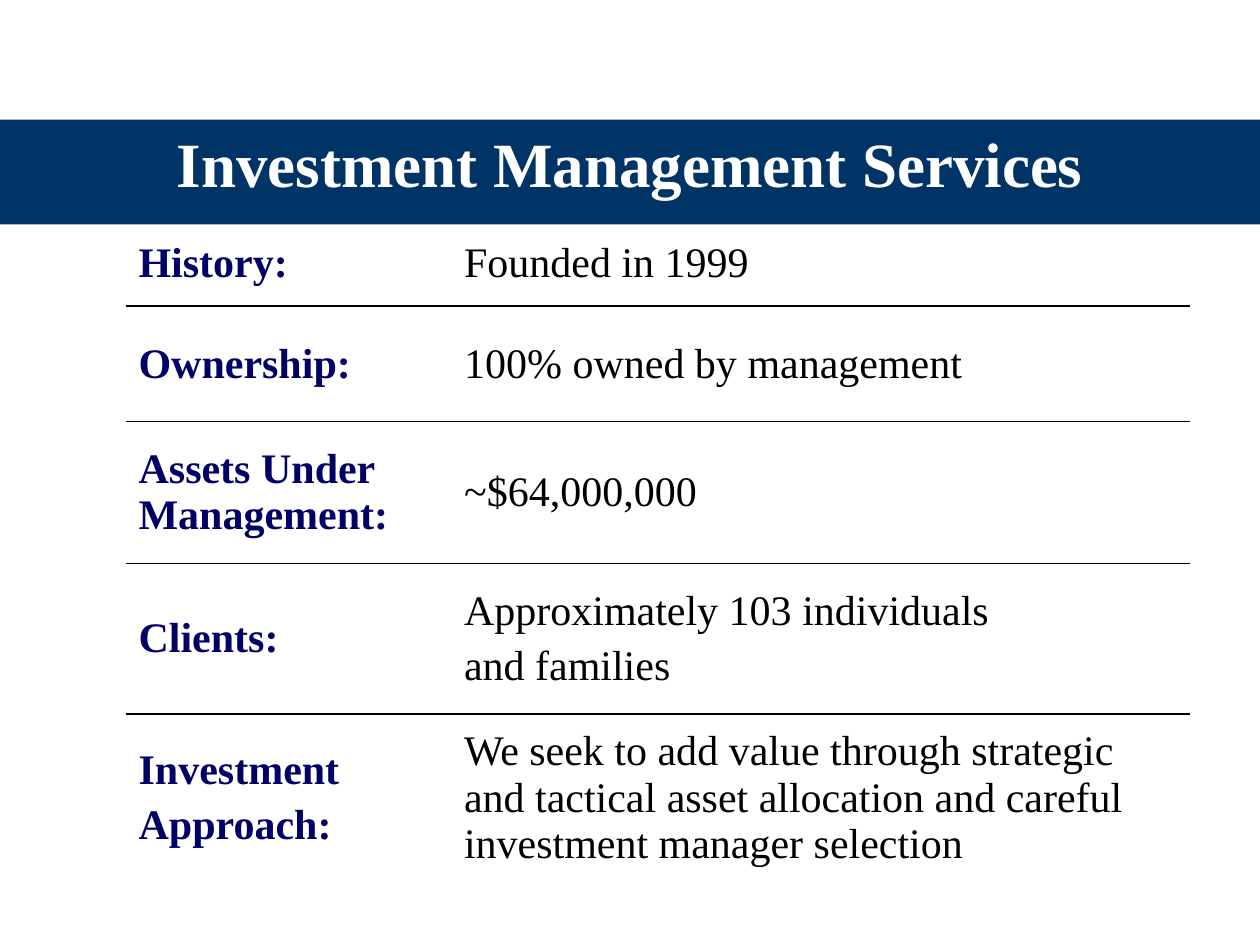
from lxml import etree
from pptx import Presentation
from pptx.dml.color import RGBColor
from pptx.enum import shapes, text
from pptx.oxml.ns import qn
from pptx.util import Pt

NAVY, LABEL, BLACK, WHITE = "003366", "000066", "000000", "FFFFFF"
COLUMN_WIDTHS = (186, 422)
FACTS = [
    (49, "History:", "Founded in 1999"),
    (66, "Ownership:", "100% owned by management"),
    (81, "Assets Under Management:", "~$64,000,000"),
    (86, "Clients:", "Approximately 103 individuals\nand families"),
    (96, "Investment\nApproach:",
     "We seek to add value through strategic and tactical asset "
     "allocation and careful investment manager selection"),
]


def colour(value):
    return RGBColor.from_string(value)


class FactSheet:
    face = "Times New Roman"
    body_size = 24
    title_size = 36

    def __init__(self, slide):
        self.slide = slide

    def style(self, paragraph, size, ink, bold):
        font = paragraph.font
        font.name, font.size, font.bold = self.face, Pt(size), bold
        font.color.rgb = colour(ink)

    def banner(self, left, top, width, height, title):
        band = self.slide.shapes.add_shape(
            shapes.MSO_SHAPE.RECTANGLE, Pt(left), Pt(top), Pt(width), Pt(height))
        band.shadow.inherit = False
        band.fill.solid()
        band.fill.fore_color.rgb = colour(NAVY)
        band.line.fill.background()
        frame = band.text_frame
        frame.word_wrap = True
        frame.vertical_anchor = text.MSO_ANCHOR.MIDDLE
        heading = frame.paragraphs[0]
        heading.text = title
        heading.alignment = text.PP_ALIGN.CENTER
        heading.line_spacing = Pt(32)
        self.style(heading, self.title_size, WHITE, True)

    def rules(self, cell, ruled_sides):
        properties = cell._tc.get_or_add_tcPr()
        for position, side in enumerate(("lnL", "lnR", "lnT", "lnB")):
            edge = etree.Element(qn(f"a:{side}"), w=str(Pt(1)))
            if side in ruled_sides:
                paint = etree.SubElement(edge, qn("a:solidFill"))
                etree.SubElement(paint, qn("a:srgbClr"), val=BLACK)
            else:
                etree.SubElement(edge, qn("a:noFill"))
            properties.insert(position, edge)

    def entry(self, cell, words, ink, bold):
        cell.fill.background()
        cell.vertical_anchor = text.MSO_ANCHOR.MIDDLE
        cell.text = words
        for paragraph in cell.text_frame.paragraphs:
            self.style(paragraph, self.body_size, ink, bold)
            spacing = etree.Element(qn("a:spcBef"))
            etree.SubElement(spacing, qn("a:spcPct"), val="20000")
            paragraph._p.get_or_add_pPr().insert(0, spacing)

    def facts(self, left, top, widths, facts):
        height = sum(fact[0] for fact in facts)
        table = self.slide.shapes.add_table(
            len(facts), len(widths), Pt(left), Pt(top),
            Pt(sum(widths)), Pt(height)).table
        table.first_row = table.horz_banding = False
        for column, width in zip(table.columns, widths):
            column.width = Pt(width)
        for index, (row_height, label, detail) in enumerate(facts):
            table.rows[index].height = Pt(row_height)
            ruled = [side for side, inner in
                     (("lnT", index > 0), ("lnB", index < len(facts) - 1)) if inner]
            label_cell, detail_cell = table.rows[index].cells
            self.entry(label_cell, label, LABEL, True)
            self.entry(detail_cell, detail, BLACK, False)
            self.rules(label_cell, ruled)
            self.rules(detail_cell, ruled)


def main():
    deck = Presentation()
    deck.slide_width, deck.slide_height = Pt(720), Pt(540)
    sheet = FactSheet(deck.slides.add_slide(deck.slide_layouts[6]))
    sheet.banner(0, 68.4, 720, 59.8, "Investment Management Services")
    sheet.facts(72, 126, COLUMN_WIDTHS, FACTS)
    deck.save("out.pptx")


if __name__ == "__main__":
    main()
